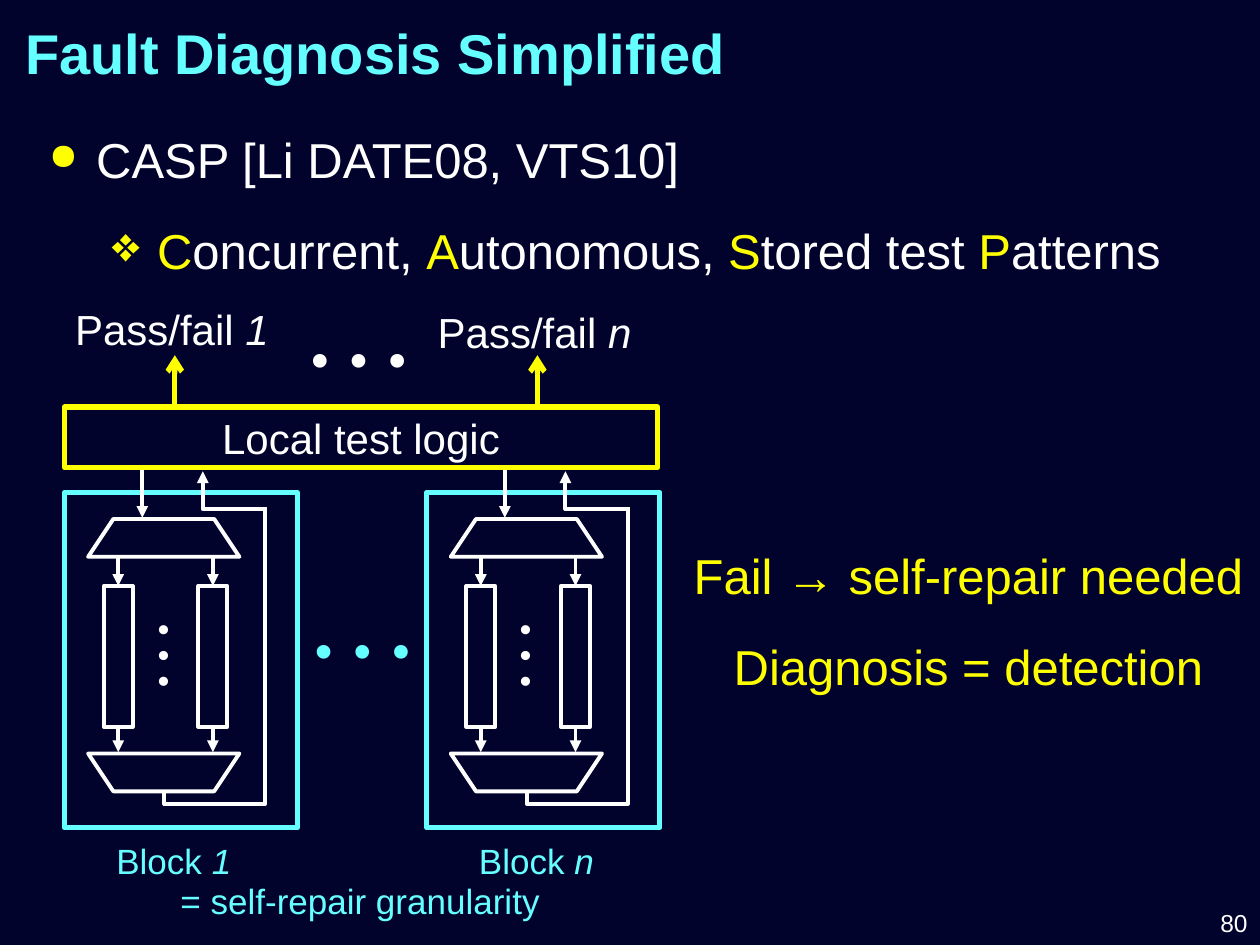
import pptx
import pptx.dml.color
import pptx.enum.shapes
import pptx.enum.text
import pptx.oxml.ns
import pptx.util
import lxml.etree

Pt = pptx.util.Pt
qn = pptx.oxml.ns.qn
ALIGN = pptx.enum.text.PP_ALIGN
ANCHOR = pptx.enum.text.MSO_ANCHOR
CONNECTOR = pptx.enum.shapes.MSO_CONNECTOR
RECTANGLE = pptx.enum.shapes.MSO_SHAPE.RECTANGLE
COLORS = {"navy": "01032D", "cyan": "66FFFF", "yellow": "FFFF00", "white": "FFFFFF"}
INSETS = (7.2, 3.6)


class DiagramSlide:
    """Draws the styled elements of one slide, with lengths in points."""

    def __init__(self, presentation):
        self.slide = presentation.slides.add_slide(presentation.slide_layouts[5])
        self.shapes = self.slide.shapes
        background = self.slide.background.fill
        background.solid()
        background.fore_color.rgb = self.color("navy")

    def color(self, name):
        return pptx.dml.color.RGBColor.from_string(COLORS[name])

    def frame(self, shape, insets=(0, 0), anchor=ANCHOR.TOP, wrap=True):
        frame = shape.text_frame
        frame.auto_size = pptx.enum.text.MSO_AUTO_SIZE.NONE
        frame.word_wrap = wrap
        frame.vertical_anchor = anchor
        frame.margin_left = frame.margin_right = Pt(insets[0])
        frame.margin_top = frame.margin_bottom = Pt(insets[1])
        return frame

    def add_runs(self, paragraph, runs, size, color="white", align=ALIGN.CENTER, font="Arial"):
        paragraph.alignment = align
        paragraph.font.size = Pt(size)
        paragraph.font.name = font
        paragraph.font.color.rgb = self.color(color)
        for text, accent, italic in runs:
            run = paragraph.add_run()
            run.text = text
            if accent:
                run.font.color.rgb = self.color(accent)
            if italic:
                run.font.italic = True

    def space(self, paragraph):
        paragraph.line_spacing = 1.3
        paragraph.space_before = Pt(0)
        before = paragraph._p.pPr.find(qn("a:spcBef"))
        before.clear()
        lxml.etree.SubElement(before, qn("a:spcPct")).set("val", "30000")

    def bullet(self, paragraph, character, margin, hanging, percent):
        properties = paragraph._p.get_or_add_pPr()
        properties.set("marL", str(Pt(margin)))
        properties.set("indent", str(-Pt(hanging)))
        color = lxml.etree.SubElement(properties, qn("a:buClr"))
        lxml.etree.SubElement(color, qn("a:srgbClr")).set("val", COLORS["yellow"])
        lxml.etree.SubElement(properties, qn("a:buSzPct")).set("val", str(percent * 1000))
        lxml.etree.SubElement(properties, qn("a:buChar")).set("char", character)

    def title(self, text, box):
        shape = self.slide.shapes.title
        shape.left, shape.top, shape.width, shape.height = map(Pt, box)
        paragraph = self.frame(shape, INSETS, ANCHOR.MIDDLE).paragraphs[0]
        paragraph.line_spacing = 0.9
        self.add_runs(paragraph, [(text, None, False)], 32, "cyan", ALIGN.LEFT)
        paragraph.font.bold = True

    def label(self, box, text, size, color="white", variable=""):
        shape = self.shapes.add_textbox(*map(Pt, box))
        runs = [(text, None, False)] + ([(variable, None, True)] if variable else [])
        self.add_runs(self.frame(shape).paragraphs[0], runs, size, color)

    def ellipsis(self, box, size, color="white", align=ALIGN.CENTER, rotation=0):
        shape = self.shapes.add_textbox(*map(Pt, box))
        shape.rotation = rotation
        paragraph = self.frame(shape, INSETS).paragraphs[0]
        self.add_runs(paragraph, [("…", None, False)], size, color, align, "Times New Roman")

    def number(self, box, text):
        shape = self.shapes.add_textbox(*map(Pt, box))
        frame = self.frame(shape, INSETS, ANCHOR.MIDDLE, False)
        self.add_runs(frame.paragraphs[0], [(text, None, False)], 14, align=ALIGN.RIGHT)

    def bullets(self, box, items):
        frame = self.frame(self.shapes.add_textbox(*map(Pt, box)), INSETS)
        for index, (level, marker, runs) in enumerate(items):
            paragraph = frame.paragraphs[0] if index == 0 else frame.add_paragraph()
            paragraph.level = level
            self.space(paragraph)
            self.bullet(paragraph, *marker)
            self.add_runs(paragraph, runs, 28, align=ALIGN.LEFT)

    def outline(self, shape, color, width):
        shape.shadow.inherit = False
        shape.fill.background()
        shape.line.color.rgb = self.color(color)
        shape.line.width = Pt(width)
        return shape

    def rectangle(self, box, color="white", width=2.25):
        return self.outline(self.shapes.add_shape(RECTANGLE, *map(Pt, box)), color, width)

    def note(self, box, lines):
        shape = self.rectangle(box)
        shape.fill.solid()
        shape.fill.fore_color.rgb = self.color("navy")
        shape.line.fill.background()
        frame = self.frame(shape, INSETS)
        for index, line in enumerate(lines):
            paragraph = frame.paragraphs[0] if index == 0 else frame.add_paragraph()
            self.space(paragraph)
            self.add_runs(paragraph, [(line, None, False)], 28, "yellow")

    def trapezoid(self, left, wide_y, narrow_y):
        points = [(left, wide_y), (left + 14.4, narrow_y),
                  (left + 72, narrow_y), (left + 86.4, wide_y)]
        start, *others = [(Pt(x), Pt(y)) for x, y in points]
        builder = self.shapes.build_freeform(*start)
        builder.add_line_segments(others, close=True)
        self.outline(builder.convert_to_shape(), "white", 2.25)

    def connector(self, kind, start, end, color="white", width=2.25, tail=None):
        connector = self.shapes.add_connector(kind, *map(Pt, start + end))
        connector.line.color.rgb = self.color(color)
        connector.line.width = Pt(width)
        properties = connector._element.spPr
        if tail:
            line = properties.find(qn("a:ln"))
            lxml.etree.SubElement(line, qn("a:tailEnd")).set("type", tail)
        lxml.etree.SubElement(properties, qn("a:effectLst"))
        return connector

    def arrow(self, start, end, color="white", width=2.25, tail="triangle"):
        return self.connector(CONNECTOR.STRAIGHT, start, end, color, width, tail)

    def elbow(self, preset, start, end, rotation, adjust=None, tail=None):
        connector = self.connector(CONNECTOR.ELBOW, start, end, tail=tail)
        properties = connector._element.spPr
        properties.find(qn("a:xfrm")).set("rot", str(rotation * 60000))
        geometry = properties.find(qn("a:prstGeom"))
        geometry.set("prst", preset)
        if adjust is not None:
            guide = lxml.etree.SubElement(geometry.find(qn("a:avLst")), qn("a:gd"))
            guide.set("name", "adj1")
            guide.set("fmla", f"val {adjust}")

    def scan_chains(self, left):
        self.shapes = self.slide.shapes.add_group_shape().shapes
        self.trapezoid(left + 13.7, 318.2, 296.6)
        self.trapezoid(left + 13.7, 430.6, 452.2)
        for chain_left in (left + 22.6, left + 76.7):
            center = chain_left + 8.25
            chain = self.rectangle((chain_left, 334.8, 16.5, 80.6))
            self.arrow((center, 319), (center, 334.8)).end_connect(chain, 0)
            self.arrow((center, 415.4), (center, 429.8)).begin_connect(chain, 2)
        self.shapes = self.slide.shapes

    def block(self, left, name, pass_fail_top):
        self.rectangle((left, 281.5, 133.2, 191.5), "cyan", 3)
        self.ellipsis((left + 31.7, 344.9, 80.6, 60.5), 44, rotation=90)
        self.scan_chains(left)
        self.arrow((left + 44.6, 267.1), (left + 44.6, 295.9))
        self.elbow("bentConnector3", (left + 167, 399.6), (left + 5, 342), 90, -4700)
        self.elbow("bentConnector2", (left + 79.2, 269.3), (left + 115.2, 290.9), 180,
                   tail="triangle")
        self.arrow((left + 63.2, 231.8), (left + 63.2, 203), "yellow", 3, "arrow")
        self.label((left - 6.5, pass_fail_top, 136.1, 25.9), "Pass/fail ", 24, variable=name)
        self.label((left + 20.9, 479.5, 83.5, 25.9), "Block ", 20, "cyan", name)


def main():
    presentation = pptx.Presentation()
    presentation.slide_width, presentation.slide_height = Pt(720), Pt(540)
    diagram = DiagramSlide(presentation)
    diagram.title("Fault Diagnosis Simplified", (7.2, 7.2, 702.7, 50.4))
    diagram.number((589, 514.8, 131, 25.2), "80")

    for left, name, pass_fail_top in ((36.7, "1", 173.5), (243.9, "n", 175)):
        diagram.block(left, name, pass_fail_top)
    diagram.ellipsis((167, 306, 146.9, 87.1), 66, "cyan", ALIGN.LEFT)
    diagram.ellipsis((100.1, 139.7, 209.5, 87.1), 66)

    logic = diagram.rectangle((36.7, 232.6, 339.1, 34.6), "yellow", 3)
    logic_frame = diagram.frame(logic, anchor=ANCHOR.MIDDLE)
    diagram.add_runs(logic_frame.paragraphs[0], [("Local test logic", None, False)], 24)

    expansion = [(" ", None, False)]
    for initial, rest in (("C", "oncurrent, "), ("A", "utonomous, "),
                          ("S", "tored test "), ("P", "atterns")):
        expansion += [(initial, "yellow", False), (rest, None, False)]
    diagram.bullets((20.9, 60.5, 671, 114.5), [
        (0, ("●", 27, 27, 75), [("CASP [Li DATE08, VTS10]", None, False)]),
        (1, ("❖", 54, 18, 100), expansion),
    ])
    diagram.label((94.3, 502.6, 223.2, 25.9), "= self-repair granularity", 20, "cyan")
    diagram.note((388.1, 298.1, 330.5, 117.4),
                 ["Fail → self-repair needed", "Diagnosis = detection"])
    presentation.save("out.pptx")


if __name__ == "__main__":
    main()
